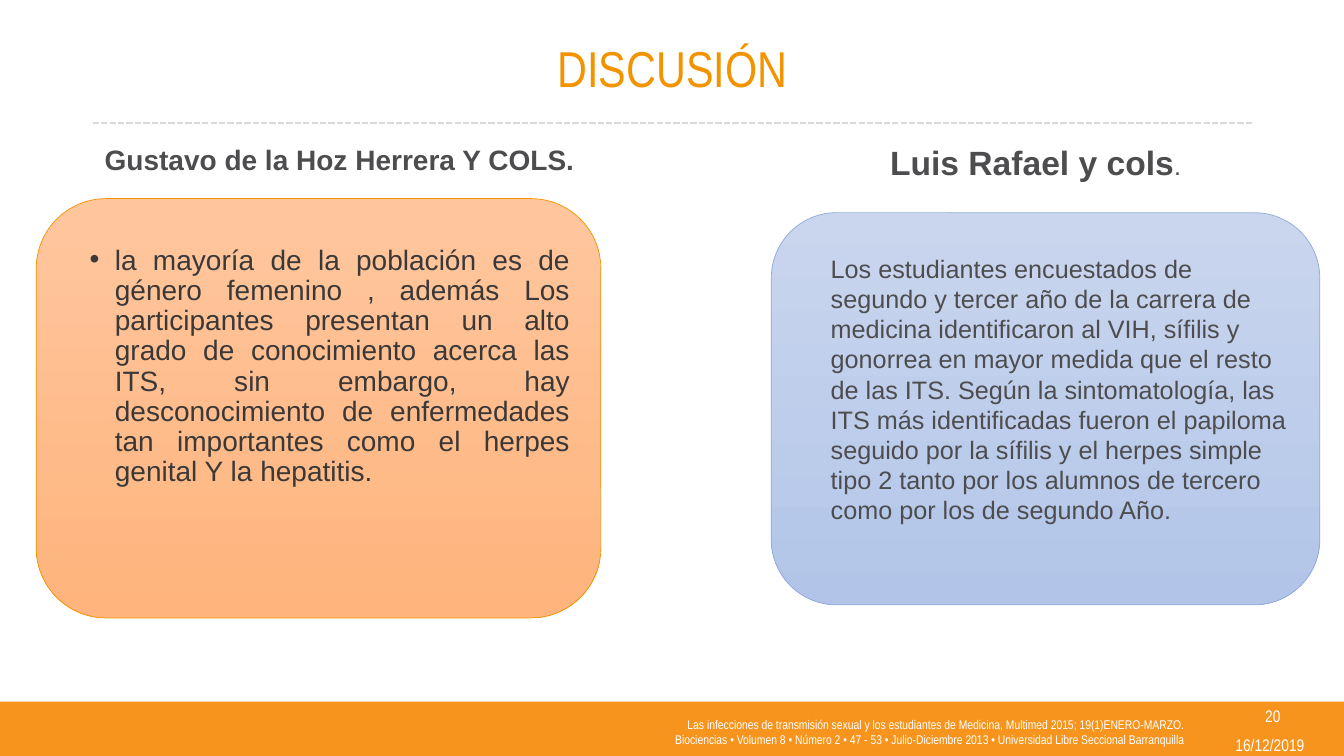
from dataclasses import dataclass

from lxml.etree import SubElement
from pptx import Presentation
from pptx.dml.color import RGBColor
from pptx.enum.dml import MSO_LINE
from pptx.enum.shapes import MSO_CONNECTOR, MSO_SHAPE
from pptx.enum.text import MSO_ANCHOR, PP_ALIGN
from pptx.oxml.ns import qn
from pptx.util import Inches, Pt


@dataclass(frozen=True)
class Theme:
    orange: str = "F29400"
    band: str = "F7941D"
    rule: str = "D9D9D9"
    white: str = "FFFFFF"
    grey: str = "4D4D4F"
    dark: str = "3B3838"
    peach: tuple = ("FFC69E", "FEB47C")
    sky: tuple = ("CAD6EE", "B2C5E8")
    sky_edge: str = "8EAADB"
    sans: str = "Arial"
    narrow: str = "Arial Narrow"
    title: int = 36
    heading: int = 24
    body: int = 20
    detail: int = 18
    stamp: int = 12
    reference: int = 9


class SlideBuilder:
    def __init__(self, deck, theme):
        self.deck = deck
        self.theme = theme
        self.slide = deck.slides.add_slide(deck.slide_layouts[6])

    def place(self, left, top, width, height):
        across, down = self.deck.slide_width / 100, self.deck.slide_height / 100
        return [round(v) for v in (left * across, top * down, width * across, height * down)]

    def band(self, area, color):
        band = self.slide.shapes.add_shape(MSO_SHAPE.RECTANGLE, *self.place(*area))
        band.shadow.inherit = False
        band.fill.solid()
        band.fill.fore_color.rgb = RGBColor.from_string(color)
        band.line.fill.background()

    def card(self, area, shades, edge):
        card = self.slide.shapes.add_shape(MSO_SHAPE.ROUNDED_RECTANGLE, *self.place(*area))
        card.shadow.inherit = False
        card.fill.gradient()
        card.fill.gradient_angle = 270
        for stop, shade in zip(card.fill.gradient_stops, shades):
            stop.color.rgb = RGBColor.from_string(shade)
        card.line.color.rgb = RGBColor.from_string(edge)
        card.line.width = Pt(0.5)

    def rule(self, left, right, level):
        x, y, length, _ = self.place(left, level, right - left, 0)
        rule = self.slide.shapes.add_connector(MSO_CONNECTOR.STRAIGHT, x, y, x + length, y)
        rule.line.color.rgb = RGBColor.from_string(self.theme.rule)
        rule.line.width = Pt(1.5)
        rule.line.dash_style = MSO_LINE.SQUARE_DOT
        SubElement(rule._element.spPr, qn("a:effectLst"))

    def text(self, area, paragraphs, color, font, align=PP_ALIGN.LEFT,
             anchor=MSO_ANCHOR.TOP, wrap=True, bullet=False):
        frame = self.slide.shapes.add_textbox(*self.place(*area)).text_frame
        frame.word_wrap = wrap
        frame.vertical_anchor = anchor
        for index, pieces in enumerate(paragraphs):
            paragraph = frame.add_paragraph() if index else frame.paragraphs[0]
            paragraph.alignment = align
            if bullet:
                self.bullet(paragraph)
            for wording, size, bold in pieces:
                run = paragraph.add_run()
                run.text = wording
                run.font.name = font
                run.font.size = Pt(size)
                run.font.bold = bold
                run.font.color.rgb = RGBColor.from_string(color)

    def bullet(self, paragraph):
        paragraph.line_spacing = 0.9
        properties = paragraph._p.get_or_add_pPr()
        properties.set("marL", str(Inches(0.25)))
        properties.set("indent", str(-Inches(0.25)))
        SubElement(properties, qn("a:buFont"), typeface=self.theme.sans)
        SubElement(properties, qn("a:buChar"), char="•")


def main():
    theme = Theme()
    deck = Presentation()
    deck.slide_width, deck.slide_height = Inches(13.33), Inches(7.5)
    page = SlideBuilder(deck, theme)

    page.band((0, 92.8, 100, 7.2), theme.band)
    page.rule(6.9, 93.17, 16.27)
    page.card((57.39, 28.13, 40.81, 51.87), theme.sky, theme.sky_edge)
    page.card((2.7, 26.27, 42.01, 55.47), theme.peach, theme.orange)

    page.text((6.9, 1.73, 86.27, 14.4), [[("DISCUSIÓN", theme.title, False)]],
              theme.orange, theme.narrow, PP_ALIGN.CENTER, MSO_ANCHOR.MIDDLE)

    page.text((7.05, 18.13, 36.76, 5.87),
              [[("Gustavo de la Hoz Herrera Y COLS.", theme.body, True)]],
              theme.grey, theme.sans, wrap=False)
    page.text((65.49, 18.13, 23.33, 6.67),
              [[("Luis Rafael y cols", theme.heading, True), (".", theme.detail, False)]],
              theme.grey, theme.sans, wrap=False)

    population = (
        "la mayoría de la población es de género femenino , además Los participantes "
        "presentan un alto grado de conocimiento acerca las ITS, sin embargo, hay "
        "desconocimiento de enfermedades tan importantes como el herpes genital Y la hepatitis."
    )
    page.text((5.93, 31.87, 37.21, 49.87), [[(population, theme.body, False)]],
              theme.dark, theme.sans, PP_ALIGN.JUSTIFY, bullet=True)

    students = (
        "Los estudiantes encuestados de segundo y tercer año de la carrera de medicina "
        "identificaron al VIH, sífilis y gonorrea en mayor medida que el resto de las ITS. "
        "Según la sintomatología, las ITS más identificadas fueron el papiloma seguido por "
        "la sífilis y el herpes simple tipo 2 tanto por los alumnos de tercero como por los "
        "de segundo Año."
    )
    page.text((61.07, 32.8, 35.71, 37.73), [[(students, theme.detail, False)]],
              theme.grey, theme.sans)

    references = (
        "Las infecciones de transmisión sexual y los estudiantes de Medicina, "
        "Multimed 2015; 19(1)ENERO-MARZO.",
        "Biociencias • Volumen 8 • Número 2 • 47 - 53 • Julio-Diciembre 2013 • "
        "Universidad Libre Seccional Barranquilla",
    )
    page.text((38.63, 93.73, 50.19, 6.27),
              [[(reference, theme.reference, False)] for reference in references],
              theme.white, theme.narrow, PP_ALIGN.RIGHT, MSO_ANCHOR.MIDDLE)

    stamps = (("20", (89.42, 92.67, 10.58, 4)), ("16/12/2019", (89.2, 97.07, 10.58, 2.8)))
    for stamp, area in stamps:
        page.text(area, [[(stamp, theme.stamp, False)]],
                  theme.white, theme.narrow, PP_ALIGN.CENTER, MSO_ANCHOR.MIDDLE)

    deck.save("out.pptx")


if __name__ == "__main__":
    main()
